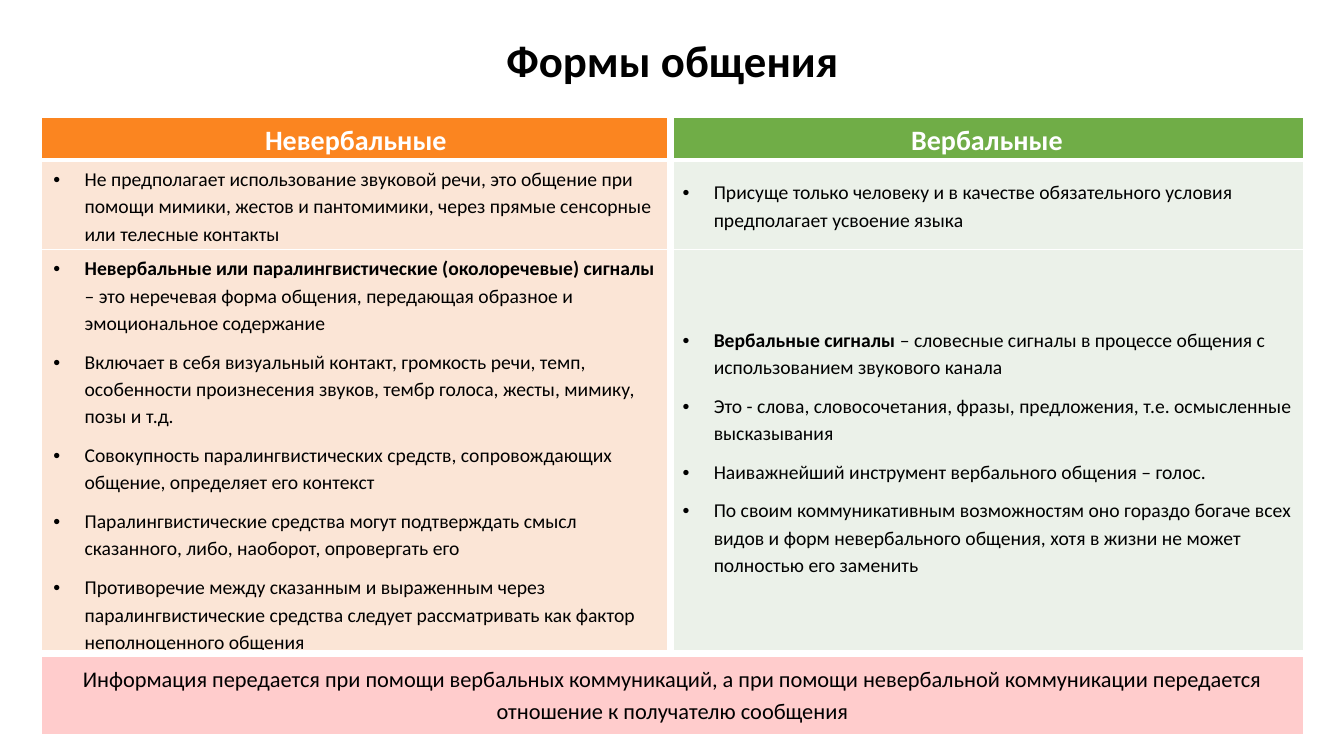
from dataclasses import dataclass

from lxml import etree
from pptx import Presentation
from pptx.dml.color import RGBColor
from pptx.enum.text import MSO_ANCHOR, PP_ALIGN
from pptx.oxml.ns import qn
from pptx.util import Inches, Pt

MIDDLE = MSO_ANCHOR.MIDDLE
CENTER = PP_ALIGN.CENTER
LEFT = PP_ALIGN.LEFT


@dataclass(frozen=True)
class Theme:
    font: str = "Calibri"
    black: str = "000000"
    white: str = "FFFFFF"
    orange: str = "FB8520"
    green: str = "70AD47"
    peach: str = "FBE5D6"
    mint: str = "EBF1E9"
    pink: str = "FFCCCC"
    title: int = 32
    head: int = 20
    body: int = 14
    note: int = 16
    thin: int = 1
    mid: int = 3
    thick: int = 6


# Each paragraph is a pair: bold lead, plain rest
HEADS = ("Невербальные", "Вербальные")
MEANING = (
    [("", "Не предполагает использование звуковой речи, это общение при помощи мимики, "
          "жестов и пантомимики, через прямые сенсорные или телесные контакты")],
    [("", "Присуще только человеку и в качестве обязательного условия предполагает "
          "усвоение языка")],
)
SIGNALS = (
    [
        ("Невербальные или паралингвистические (околоречевые) сигналы ",
         "– это неречевая форма общения, передающая образное и эмоциональное содержание"),
        ("", "Включает в себя визуальный контакт, громкость речи, темп, особенности "
             "произнесения звуков, тембр голоса, жесты, мимику, позы и т.д."),
        ("", "Совокупность паралингвистических средств, сопровождающих общение, "
             "определяет его контекст"),
        ("", "Паралингвистические средства могут подтверждать смысл сказанного, либо, "
             "наоборот, опровергать его"),
        ("", "Противоречие между сказанным и выраженным через паралингвистические "
             "средства следует рассматривать как фактор неполноценного общения"),
    ],
    [
        ("Вербальные сигналы",
         " – словесные сигналы в процессе общения с использованием звукового канала"),
        ("", "Это - слова, словосочетания, фразы, предложения, т.е. осмысленные высказывания"),
        ("", "Наиважнейший инструмент вербального общения – голос."),
        ("", "По своим коммуникативным возможностям оно гораздо богаче всех видов и форм "
             "невербального общения, хотя в жизни не может полностью его заменить"),
    ],
)
NOTE = ("Информация передается при помощи вербальных коммуникаций, а при помощи "
        "невербальной коммуникации передается отношение к получателю сообщения")


class Board:
    def __init__(self, slide, theme):
        self.slide = slide
        self.theme = theme

    def words(self, para, parts, size, color, align=LEFT, spacing=1.15, after=8):
        para.alignment = align
        para.line_spacing = spacing
        para.space_after = Pt(after)
        for text, bold in parts:
            if text:
                run = para.add_run()
                run.text = text
                font = run.font
                font.name = self.theme.font
                font.size = Pt(size)
                font.bold = bold
                font.color.rgb = RGBColor.from_string(color)

    def bullet(self, para):
        props = para._p.get_or_add_pPr()
        props.set("marL", str(Inches(0.31)))
        props.set("indent", str(-Inches(0.31)))
        etree.SubElement(props, qn("a:buFont"), typeface="Arial")
        etree.SubElement(props, qn("a:buChar"), char="•")

    def title(self, text, left, top, width, height):
        box = self.slide.shapes.add_textbox(
            Inches(left), Inches(top), Inches(width), Inches(height))
        frame = box.text_frame
        frame.word_wrap = True
        frame.vertical_anchor = MIDDLE
        self.words(frame.paragraphs[0], [(text, True)], self.theme.title,
                   self.theme.black, CENTER, 0.9, 0)

    def table(self, left, top, cols, rows):
        shape = self.slide.shapes.add_table(
            len(rows), len(cols), Inches(left), Inches(top),
            Inches(sum(cols)), Inches(sum(rows)))
        grid = shape.table
        grid.first_row = grid.horz_banding = False
        for col, width in zip(grid.columns, cols):
            col.width = Inches(width)
        for row, height in zip(grid.rows, rows):
            row.height = Inches(height)
        return grid

    def cell(self, cell, fill, edges, pads):
        # Borders come before the fill in the cell properties
        props = cell._tc.get_or_add_tcPr()
        for side, width in zip("LRTB", edges):
            line = etree.SubElement(props, qn(f"a:ln{side}"), w=str(Pt(width)))
            paint = etree.SubElement(line, qn("a:solidFill"))
            etree.SubElement(paint, qn("a:srgbClr"), val=self.theme.white)
        cell.fill.solid()
        cell.fill.fore_color.rgb = RGBColor.from_string(fill)
        cell.vertical_anchor = MIDDLE
        (cell.margin_left, cell.margin_right,
         cell.margin_top, cell.margin_bottom) = map(Inches, pads)

    def points(self, cell, items):
        frame = cell.text_frame
        for i, (lead, rest) in enumerate(items):
            para = frame.add_paragraph() if i else frame.paragraphs[0]
            self.bullet(para)
            self.words(para, [(lead, True), (rest, False)],
                       self.theme.body, self.theme.black)


def main():
    deck = Presentation()
    deck.slide_width, deck.slide_height = Inches(13.33), Inches(7.5)
    theme = Theme()
    board = Board(deck.slides.add_slide(deck.slide_layouts[6]), theme)
    thin, mid, thick = theme.thin, theme.mid, theme.thick

    board.title("Формы общения", 0.92, 0.25, 11.5, 0.75)
    grid = board.table(0.41, 1.16, (6.24, 6.28), (0.43, 0.8, 3.69, 0.8))

    # Two columns: heading, meaning, signals
    for c, (dark, pale) in enumerate(
            ((theme.orange, theme.peach), (theme.green, theme.mint))):
        sides = (thick, thin) if c else (thin, thick)
        head = grid.cell(0, c)
        board.cell(head, dark, (*sides, thin, mid), (0.07, 0.07, 0, 0))
        board.words(head.text_frame.paragraphs[0], [(HEADS[c], True)],
                    theme.head, theme.white, CENTER)
        pads = (0.12, 0.07 if c else 0.12, 0.04, 0.04)
        for r, (items, base) in enumerate(((MEANING, thin), (SIGNALS, thick)), 1):
            body = grid.cell(r, c)
            board.cell(body, pale, (*sides, thin, base), pads)
            board.points(body, items[c])

    # Summary across both columns
    note = grid.cell(3, 0)
    note.merge(grid.cell(3, 1))
    board.cell(note, theme.pink, (thin, thin, thick, thin), (0.12, 0.12, 0.04, 0.04))
    board.words(note.text_frame.paragraphs[0], [(NOTE, False)],
                theme.note, theme.black, CENTER)

    deck.save("out.pptx")


if __name__ == "__main__":
    main()
